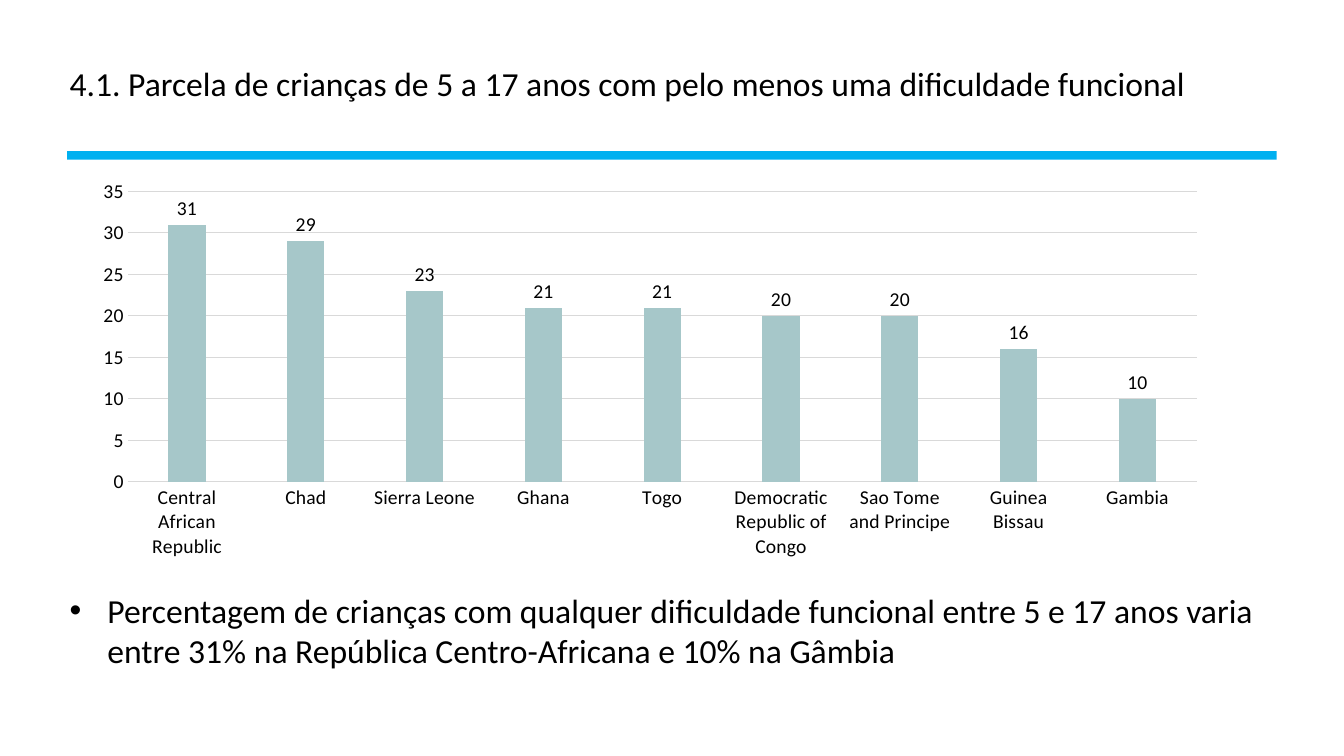
import pptx
import pptx.chart.data
import pptx.dml.color
import pptx.enum.chart
import pptx.enum.shapes
import pptx.enum.text
import pptx.util
from dataclasses import dataclass

Pt = pptx.util.Pt
RGB = pptx.dml.color.RGBColor.from_string


@dataclass(frozen=True)
class Theme:
    font: str = "Calibri"
    ink: str = "000000"
    accent: str = "00B0F0"
    bars: str = "A6C7C9"
    grid: str = "D9D9D9"
    text_size: float = 24
    chart_size: float = 14
    hairline: float = 0.75


THEME = Theme()

SHARES = {
    "Central African Republic": 31,
    "Chad": 29,
    "Sierra Leone": 23,
    "Ghana": 21,
    "Togo": 21,
    "Democratic Republic of Congo": 20,
    "Sao Tome and Principe": 20,
    "Guinea Bissau": 16,
    "Gambia": 10,
}


def apply(target, formats):
    for name, value in formats.items():
        setattr(target, name, value)


def style_font(font, size):
    apply(font, {"name": THEME.font, "size": Pt(size), "bold": False})
    font.color.rgb = RGB(THEME.ink)


def style_line(line):
    line.color.rgb = RGB(THEME.grid)
    line.width = Pt(THEME.hairline)


def place(shape, box):
    apply(shape, dict(zip(("left", "top", "width", "height"), map(Pt, box))))


def fill_placeholder(placeholder, box, text, anchor):
    place(placeholder, box)
    frame = placeholder.text_frame
    frame.text = text
    apply(frame, {"word_wrap": True, "vertical_anchor": anchor,
                  "auto_size": pptx.enum.text.MSO_AUTO_SIZE.NONE})
    paragraph = frame.paragraphs[0]
    apply(paragraph, {"alignment": pptx.enum.text.PP_ALIGN.LEFT, "space_before": Pt(0)})
    style_font(paragraph.font, THEME.text_size)


def add_title_rule(slide, box):
    rule = slide.shapes.add_shape(pptx.enum.shapes.MSO_SHAPE.RECTANGLE, *map(Pt, box))
    rule.shadow.inherit = False
    rule.fill.solid()
    rule.fill.fore_color.rgb = RGB(THEME.accent)
    rule.line.fill.background()


def add_share_chart(slide, box):
    data = pptx.chart.data.CategoryChartData()
    data.categories = list(SHARES)
    data.add_series("Series 1", list(SHARES.values()))
    chart = slide.shapes.add_chart(
        pptx.enum.chart.XL_CHART_TYPE.COLUMN_CLUSTERED, *map(Pt, box), data).chart
    apply(chart, {"has_legend": False, "has_title": False})
    style_font(chart.font, THEME.chart_size)

    # Columns and their values
    plot = chart.plots[0]
    apply(plot, {"gap_width": 219, "overlap": -27, "vary_by_categories": False,
                 "has_data_labels": True})
    columns = plot.series[0]
    columns.invert_if_negative = False
    columns.format.fill.solid()
    columns.format.fill.fore_color.rgb = RGB(THEME.bars)
    apply(plot.data_labels, {"show_value": True,
                             "position": pptx.enum.chart.XL_LABEL_POSITION.OUTSIDE_END})
    style_font(plot.data_labels.font, THEME.chart_size)

    # Axes
    no_ticks = pptx.enum.chart.XL_TICK_MARK.NONE
    countries, percent = chart.category_axis, chart.value_axis
    for axis in (countries, percent):
        apply(axis, {"major_tick_mark": no_ticks, "minor_tick_mark": no_ticks})
        style_font(axis.tick_labels.font, THEME.chart_size)
    style_line(countries.format.line)
    apply(percent, {"minimum_scale": 0, "maximum_scale": 35, "major_unit": 5,
                    "has_major_gridlines": True})
    style_line(percent.major_gridlines.format.line)
    percent.format.line.fill.background()


def build_chart_slide(deck, box):
    left, top, width, height = box
    slide = deck.slides.add_slide(deck.slide_layouts[1])
    anchor = pptx.enum.text.MSO_ANCHOR

    # Title and rule
    fill_placeholder(
        slide.shapes.title, (left + 42.5, top + 20, width - 42.5, 78.5),
        "4.1. Parcela de crianças de 5 a 17 anos com pelo menos uma dificuldade funcional",
        anchor.MIDDLE)
    add_title_rule(slide, (left + 48, top + 108, width - 96, 6))

    # Chart
    add_share_chart(slide, (left + 57.6, top + 122.4, 813.6, 282.2))

    # Finding
    fill_placeholder(
        slide.placeholders[1], (left + 42.5, top + height - 122.4, 898, 78.5),
        "Percentagem de crianças com qualquer dificuldade funcional entre 5 e 17 anos varia "
        "entre 31% na República Centro-Africana e 10% na Gâmbia",
        anchor.TOP)


def main():
    deck = pptx.Presentation()
    apply(deck, {"slide_width": Pt(960), "slide_height": Pt(540)})
    build_chart_slide(deck, (0, 0, 960, 540))
    deck.save("out.pptx")


if __name__ == "__main__":
    main()
